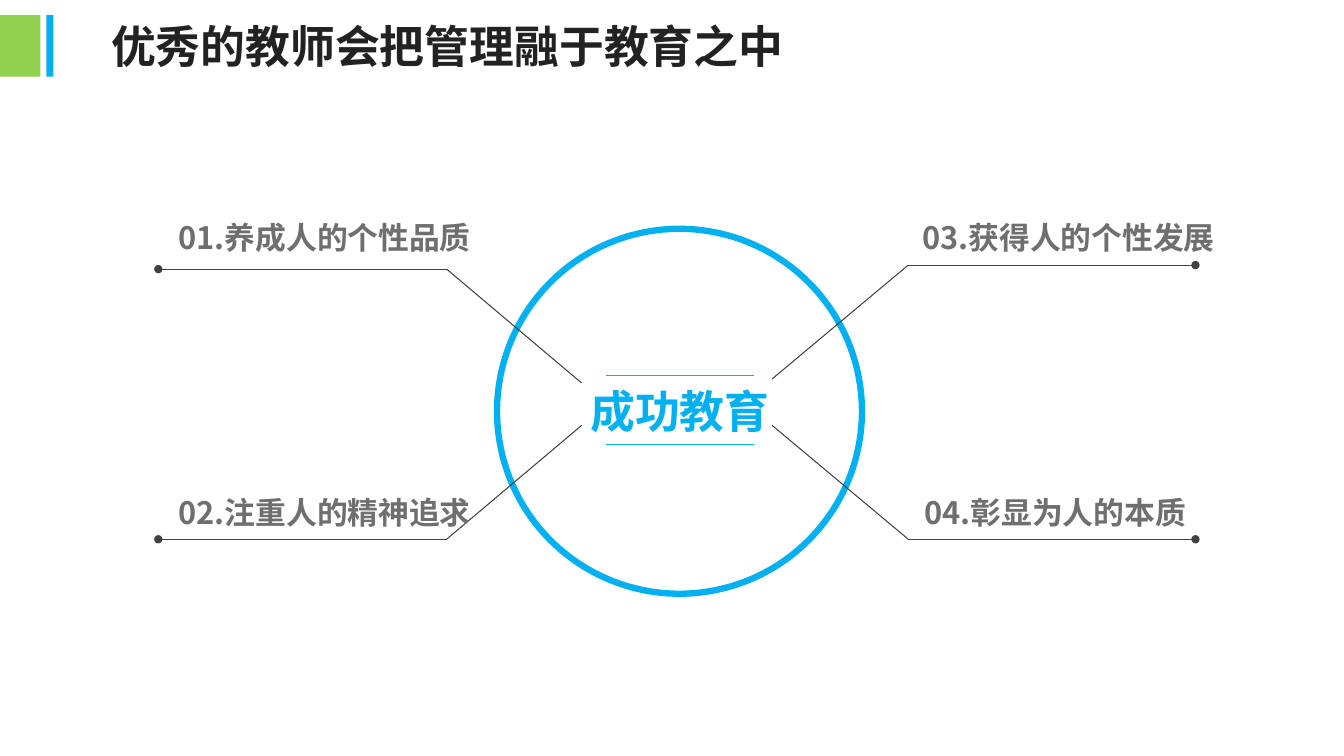
from dataclasses import dataclass

from lxml.etree import SubElement
from pptx import Presentation
from pptx.dml.color import RGBColor
from pptx.enum.shapes import MSO_CONNECTOR as Connector, MSO_SHAPE as Shape
from pptx.enum.text import MSO_ANCHOR as Anchor, MSO_AUTO_SIZE as AutoSize, PP_ALIGN as Align
from pptx.oxml.ns import qn
from pptx.util import Inches, Pt

WIDTH, HEIGHT = Inches(13.33), Inches(7.5)


@dataclass(frozen=True)
class Theme:
    blue: str = "00B0F0"
    green: str = "92D050"
    title_ink: str = "222222"
    label_ink: str = "6F6F6F"
    line_ink: str = "404040"
    title_font: str = "Noto Sans CJK JP"
    label_font: str = "Noto Sans CJK SC"
    hub_font: str = "Calibri"
    heading_size: float = 32
    label_size: float = 22
    thin: float = 0.75
    thick: float = 4.5


@dataclass(frozen=True)
class Box:
    left: float
    top: float
    width: float
    height: float

    def lengths(self) -> tuple[int, int, int, int]:
        return column(self.left), row(self.top), column(self.width), row(self.height)


@dataclass(frozen=True)
class Side:
    dot: float
    elbow: float
    hub: float


@dataclass(frozen=True)
class Callout:
    text: str
    label: Box
    side: Side
    dot_row: float
    hub_row: float


THEME = Theme()
LEFT = Side(11.78, 33.23, 43.28)
RIGHT = Side(88.95, 67.58, 57.45)
CALLOUTS = (
    Callout("01.养成人的个性品质", Box(12.3, 28, 24.75, 6.67), LEFT, 35.6, 50.67),
    Callout("02.注重人的精神追求", Box(12.3, 64.4, 24.75, 6.67), LEFT, 71.33, 56.27),
    Callout("03.获得人的个性发展", Box(67.65, 28, 24.98, 6.67), RIGHT, 35.07, 50.13),
    Callout("04.彰显为人的本质", Box(67.8, 64.4, 23.85, 6.67), RIGHT, 71.33, 56.27),
)
BARS = ((Box(0, 2, 3, 8.13), THEME.green), (Box(3.45, 2, 0.53, 8.13), THEME.blue))
TITLE_BOX = Box(4.2, 2, 58.2, 8.13)
CIRCLE = Box(36.98, 30.27, 27.15, 48.27)
HUB_BOX = Box(42.9, 49.87, 15.38, 8.93)
HUB_RULE_ROWS = (49.73, 58.8)


def column(count: float) -> int:
    return round(WIDTH * count / 100)


def row(count: float) -> int:
    return round(HEIGHT * count / 100)


def write(shape, text: str, font_name: str, size: float, color: str, align: Align) -> None:
    shape.text_frame.text = text
    paragraph = shape.text_frame.paragraphs[0]
    paragraph.alignment = align
    font = paragraph.font
    font.name, font.size, font.bold = font_name, Pt(size), True
    font.color.rgb = RGBColor.from_string(color)
    defaults = paragraph._p.pPr.find(qn("a:defRPr"))
    SubElement(defaults, qn("a:ea")).set("typeface", font_name)


def add_text(slide, box: Box, text: str, font_name: str, size: float, color: str,
             align: Align, wrap: bool) -> None:
    shape = slide.shapes.add_textbox(*box.lengths())
    frame = shape.text_frame
    frame.word_wrap, frame.auto_size = wrap, AutoSize.SHAPE_TO_FIT_TEXT
    frame.margin_left = frame.margin_right = column(0.98)
    frame.margin_top = frame.margin_bottom = row(0.93)
    write(shape, text, font_name, size, color, align)


def add_line(slide, start: tuple[float, float], end: tuple[float, float], color: str,
             dotted: bool = False) -> None:
    line = slide.shapes.add_connector(
        Connector.STRAIGHT, column(start[0]), row(start[1]), column(end[0]), row(end[1]))
    line.line.color.rgb = RGBColor.from_string(color)
    line.line.width = Pt(THEME.thin)
    properties = line._element.spPr
    if dotted:
        SubElement(properties.find(qn("a:ln")), qn("a:headEnd")).set("type", "oval")
    SubElement(properties, qn("a:effectLst"))


def add_bar(slide, box: Box, color: str) -> None:
    bar = slide.shapes.add_shape(Shape.RECTANGLE, *box.lengths())
    bar.shadow.inherit = False
    bar.fill.solid()
    bar.fill.fore_color.rgb = RGBColor.from_string(color)
    bar.line.fill.background()


def add_circle(slide) -> None:
    circle = slide.shapes.add_shape(Shape.OVAL, *CIRCLE.lengths())
    circle.shadow.inherit = False
    circle.fill.background()
    circle.line.color.rgb = RGBColor.from_string(THEME.blue)
    circle.line.width = Pt(THEME.thick)


def add_callout(slide, callout: Callout) -> None:
    side = callout.side
    elbow = (side.elbow, callout.dot_row)
    add_line(slide, (side.dot, callout.dot_row), elbow, THEME.line_ink, dotted=True)
    add_line(slide, elbow, (side.hub, callout.hub_row), THEME.line_ink)
    add_text(slide, callout.label, callout.text, THEME.label_font, THEME.label_size,
             THEME.label_ink, Align.LEFT, wrap=True)


def set_title(slide, text: str) -> None:
    title = slide.shapes.title
    title.left, title.top, title.width, title.height = TITLE_BOX.lengths()
    frame = title.text_frame
    frame.auto_size, frame.vertical_anchor = AutoSize.NONE, Anchor.MIDDLE
    write(title, text, THEME.title_font, THEME.heading_size, THEME.title_ink, Align.CENTER)


def main() -> None:
    """Build the slide on successful education with four callouts round a hub."""
    presentation = Presentation()
    presentation.slide_width, presentation.slide_height = WIDTH, HEIGHT
    slide = presentation.slides.add_slide(presentation.slide_layouts[5])
    set_title(slide, "优秀的教师会把管理融于教育之中")
    for box, color in BARS:
        add_bar(slide, box, color)
    for rule_row in HUB_RULE_ROWS:
        add_line(slide, (45.08, rule_row), (56.1, rule_row), THEME.blue)
    add_circle(slide)
    add_text(slide, HUB_BOX, "成功教育", THEME.hub_font, THEME.heading_size, THEME.blue,
             Align.CENTER, wrap=False)
    for callout in CALLOUTS:
        add_callout(slide, callout)
    presentation.save("out.pptx")


if __name__ == "__main__":
    main()
